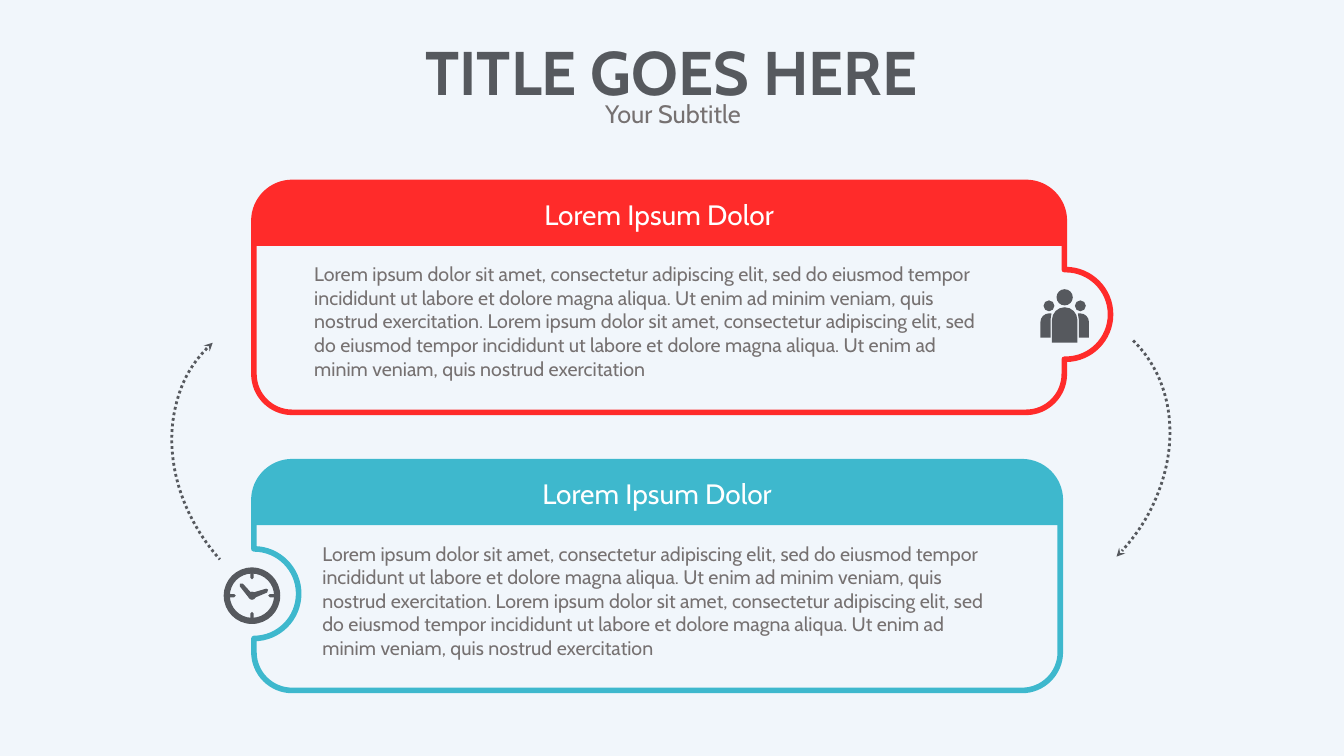
from math import cos, radians, sin, tan

from lxml import etree
from pptx import Presentation
from pptx.dml.color import RGBColor
from pptx.enum.dml import MSO_LINE
from pptx.enum.shapes import MSO_SHAPE
from pptx.enum.text import MSO_ANCHOR, MSO_AUTO_SIZE, PP_ALIGN
from pptx.oxml.ns import qn
from pptx.util import Pt

BACKGROUND = RGBColor(0xEE, 0xF4, 0xFA)
DARK = RGBColor(0x56, 0x59, 0x5E)
GREY = RGBColor(0x76, 0x71, 0x71)
WHITE = RGBColor(0xFF, 0xFF, 0xFF)
RED = RGBColor(0xFF, 0x2B, 0x2A)
TEAL = RGBColor(0x3E, 0xB8, 0xCD)

ARC, OVAL, RECTANGLE = MSO_SHAPE.ARC, MSO_SHAPE.OVAL, MSO_SHAPE.RECTANGLE
DOTTED = MSO_LINE.ROUND_DOT
TOP, MIDDLE = MSO_ANCHOR.TOP, MSO_ANCHOR.MIDDLE
LEFT, CENTER = PP_ALIGN.LEFT, PP_ALIGN.CENTER
GROW = MSO_AUTO_SIZE.SHAPE_TO_FIT_TEXT

FONT = "Cabin"
CORNER = 27.4
NOTCH_RADIUS = 32
NOTCH_DROP = 94.3
HEADER_HEIGHT = 45.4
SENTENCE = (
    "Lorem ipsum dolor sit amet, consectetur adipiscing elit, sed do eiusmod tempor "
    "incididunt ut labore et dolore magna aliqua. Ut enim ad minim veniam, quis "
    "nostrud exercitation"
)
BODY = f"{SENTENCE}. {SENTENCE}"


def lines(*points):
    """Return one outline step per straight corner."""
    return [[point] for point in points]


def arc(center_x, center_y, radius, start, end):
    """Return a start step and one cubic step per quarter, degrees clockwise from the right."""
    quarter = 90 if end > start else -90
    handle = 4 / 3 * tan(radians(quarter / 4))

    def locate(angle, pull):
        a = radians(angle)
        return (center_x + radius * (cos(a) - pull * sin(a)),
                center_y + radius * (sin(a) + pull * cos(a)))

    steps = [[locate(start, 0)]]
    for angle in range(start, end, quarter):
        following = angle + quarter
        steps.append([locate(angle, handle), locate(following, -handle), locate(following, 0)])
    return steps


def paint(shape, fill=None, line=None, width=0):
    """Set the fill and line of a shape and drop its shadow."""
    shape.shadow.inherit = False
    if fill is None:
        shape.fill.background()
    else:
        shape.fill.solid()
        shape.fill.fore_color.rgb = fill
    if line is None:
        shape.line.fill.background()
    else:
        shape.line.color.rgb = line
        shape.line.width = Pt(width)


def add_outline(slide, contours, left=0, top=0, **style):
    """Draw closed contours of straight and cubic steps as one freeform."""
    builder = None
    for contour in contours:
        points = [(Pt(left + x), Pt(top + y)) for step in contour for x, y in step]
        if builder is None:
            builder = slide.shapes.build_freeform(*points[0])
        else:
            builder.move_to(*points[0])
        builder.add_line_segments(points[1:])
    shape = builder.convert_to_shape()
    commands = iter(list(shape._element.iter(qn("a:moveTo"), qn("a:lnTo"))))
    for step in (step for contour in contours for step in contour):
        first, *others = [next(commands) for _ in step]
        if others:
            first.tag = qn("a:cubicBezTo")
            for other in others:
                first.append(other[0])
                other.getparent().remove(other)
    paint(shape, **style)
    return shape


def write(shape, text, size, color, alignment, anchor, bold=False):
    """Write one formatted paragraph into a shape."""
    frame = shape.text_frame
    frame.word_wrap = True
    frame.vertical_anchor = anchor
    paragraph = frame.paragraphs[0]
    paragraph.alignment = alignment
    paragraph.space_before = Pt(0)
    run = paragraph.add_run()
    run.text = text
    run.font.name = FONT
    run.font.size = Pt(size)
    run.font.bold = bold
    run.font.color.rgb = color


def place(shape, left, top, width, height):
    """Move a shape to a box given in points."""
    shape.left, shape.top = Pt(left), Pt(top)
    shape.width, shape.height = Pt(width), Pt(height)


def add_backdrop(slide, width, height):
    """Put a translucent backdrop behind everything on the slide master."""
    shape = slide.shapes.add_shape(RECTANGLE, 0, 0, width, height)
    paint(shape, BACKGROUND)
    color = shape._element.spPr.find(qn("a:solidFill"))[0]
    etree.SubElement(color, qn("a:alpha"), val="80000")
    shape._element.nvSpPr.cNvPr.set("id", "100")
    slide.slide_layout.slide_master.shapes._spTree.insert(2, shape._element)


def add_heading(slide, left, top, width):
    """Fill the title and the subtitle just below it."""
    title, subtitle = slide.placeholders
    place(title, left, top, width, 60.5)
    write(title, "TITLE GOES HERE", 44, DARK, CENTER, TOP, bold=True)
    place(subtitle, left + 54.5, top + 46, width - 107, 29)
    write(subtitle, "Your Subtitle", 18, GREY, CENTER, TOP)
    for shape in (title, subtitle):
        shape.text_frame.auto_size = GROW


def add_card(slide, left, top, width, height, color, notch_on_right, indent):
    """Draw a rounded card with a header, body text and a round notch on one side."""
    right, bottom = left + width, top + height
    notch_y = top + NOTCH_DROP
    upper = (arc(left + CORNER, top + CORNER, CORNER, 180, 270)
             + arc(right - CORNER, top + CORNER, CORNER, 270, 360))
    lower = (arc(right - CORNER, bottom - CORNER, CORNER, 0, 90)
             + arc(left + CORNER, bottom - CORNER, CORNER, 90, 180))
    if notch_on_right:
        border = (upper + lines((right, notch_y - NOTCH_RADIUS))
                  + arc(right + 1, notch_y, NOTCH_RADIUS, -90, 90)
                  + lines((right, notch_y + NOTCH_RADIUS)) + lower)
    else:
        border = upper + lower + arc(left, notch_y, NOTCH_RADIUS, 90, -90)
    add_outline(slide, [border], line=color, width=4)

    header_bottom = top + HEADER_HEIGHT
    header_border = upper + lines((right, header_bottom), (left, header_bottom))
    header = add_outline(slide, [header_border], fill=color)
    write(header, "Lorem Ipsum Dolor", 20, WHITE, CENTER, MIDDLE)

    body = slide.shapes.add_textbox(Pt(left + indent), Pt(top + 53.5), Pt(492.5), Pt(92.2))
    write(body, BODY, 14, GREY, LEFT, TOP)
    body.text_frame.auto_size = GROW


def add_curved_arrow(slide, left, top, rotation, arrow_end, flipped=False):
    """Draw a dotted quarter arc with an arrowhead at one end."""
    shape = slide.shapes.add_shape(ARC, Pt(left), Pt(top), Pt(198.7), Pt(237.6))
    paint(shape, line=DARK, width=2)
    shape.line.dash_style = DOTTED
    shape.rotation = rotation
    if flipped:
        shape._element.spPr.xfrm.set("flipH", "1")
    etree.SubElement(shape.get_or_add_ln(), qn(arrow_end), type="stealth")


def add_people_icon(slide, center_x, top):
    """Draw three people as one outline."""
    contours = [arc(0, 5.8, 5.8, 0, 360),
                arc(0, 22, 9.1, 180, 360) + lines((9.1, 38.2), (-9.1, 38.2))]
    side_body = (lines((-10.1, 34.6), (-17.3, 34.6)) + arc(-11.2, 23.4, 6.1, 180, 270)
                 + lines((-9.4, 17.3), (-10.1, 21.6)))
    for side in (1, -1):
        contours.append(arc(-11.2 * side, 11.9, 3.9, 0, 360))
        contours.append([[(x * side, y) for x, y in step] for step in side_body])
    add_outline(slide, contours, center_x, top, fill=DARK)


def add_clock_icon(slide, center_x, center_y):
    """Draw a clock with two hands, a ring, four ticks and a hub."""
    parts = [
        [lines((0, -1.4), (-2.9, 0.7), (-8.6, -6.5), (-8.6, -8.6), (-6.5, -8.6))],
        [lines((2.2, 1.4), (0.7, -2.2), (10.1, -5), (11.5, -4.3), (10.8, -2.2))],
        [arc(0, 0, 20.2, 0, 360), arc(0, 0, 15.8, 0, 360)],
    ]
    for angle in range(0, 360, 90):
        x, y = cos(radians(angle)), sin(radians(angle))
        parts.append([arc(18.2 * x, 18.2 * y, 1.2, angle - 90, angle + 90)
                      + arc(12.8 * x, 12.8 * y, 1.2, angle + 90, angle + 270)])
    for contours in parts:
        add_outline(slide, contours, center_x, center_y, fill=DARK)
    hub = slide.shapes.add_shape(OVAL, Pt(center_x - 2.9), Pt(center_y - 2.9), Pt(5.8), Pt(5.8))
    paint(hub, DARK)


def main():
    """Build the slide and save it."""
    presentation = Presentation()
    presentation.slide_width, presentation.slide_height = Pt(960), Pt(540)
    slide = presentation.slides.add_slide(presentation.slide_layouts[0])
    add_backdrop(slide, presentation.slide_width, presentation.slide_height)
    add_heading(slide, 262.8, 20.6, 433.8)
    add_card(slide, 181.4, 130.3, 578.9, 164.2, RED, True, 36)
    add_card(slide, 181.4, 329.8, 576, 163.4, TEAL, False, 41.8)
    add_curved_arrow(slide, 627.1, 209.5, 44.3, "a:tailEnd")
    add_curved_arrow(slide, 131.8, 214.6, 318.2, "a:headEnd", flipped=True)
    add_people_icon(slide, 760.5, 206.6)
    add_clock_icon(slide, 180, 425.5)
    presentation.save("out.pptx")


if __name__ == "__main__":
    main()
